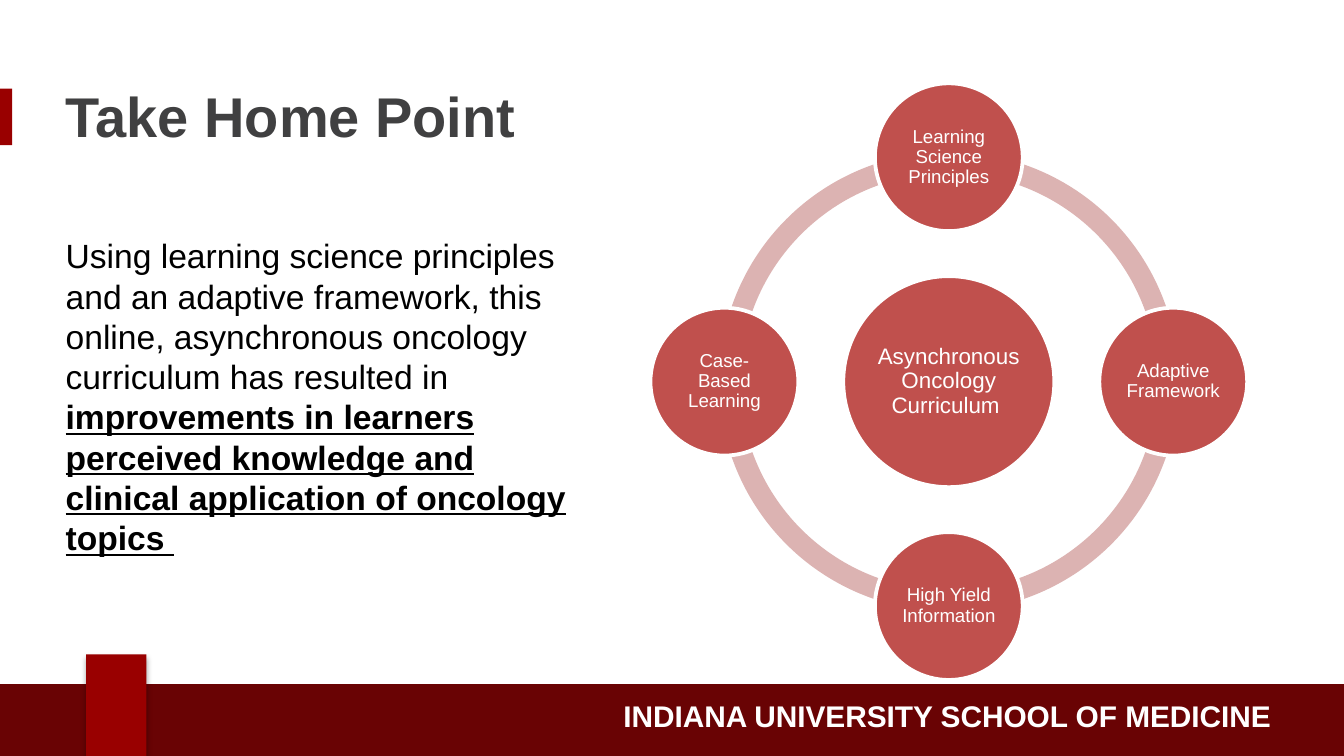
from lxml import etree
from pptx import Presentation
from pptx.dml.color import RGBColor
from pptx.enum.shapes import MSO_SHAPE
from pptx.enum.text import MSO_ANCHOR, PP_ALIGN
from pptx.oxml.ns import qn
from pptx.util import Inches, Pt

RECTANGLE, CIRCLE, ARC = MSO_SHAPE.RECTANGLE, MSO_SHAPE.OVAL, MSO_SHAPE.BLOCK_ARC
LEFT, CENTER, RIGHT = PP_ALIGN.LEFT, PP_ALIGN.CENTER, PP_ALIGN.RIGHT
TOP, MIDDLE = MSO_ANCHOR.TOP, MSO_ANCHOR.MIDDLE

CRIMSON = RGBColor(0x99, 0x00, 0x00)
MAROON = RGBColor(0x69, 0x03, 0x04)
CHARCOAL = RGBColor(0x40, 0x40, 0x41)
ROSE = RGBColor(0xDC, 0xB3, 0xB2)
BRICK = RGBColor(0xC0, 0x50, 0x4D)
WHITE = RGBColor(0xFF, 0xFF, 0xFF)
BLACK = RGBColor(0x00, 0x00, 0x00)

HUB_X, HUB_Y, ORBIT = 7.06, 2.84, 1.67
HUB_SIZE, TOPIC_SIZE, RING_SIZE = 1.57, 1.1, 3.42
TOPICS = [
    ("Learning Science Principles", 0, -1),
    ("Adaptive Framework", 1, 0),
    ("High Yield Information", 0, 1),
    ("Case-Based Learning", -1, 0),
]
QUARTERS = [(108, 162), (54, 108), (0, 54), (162, 0)]


def write(frame, *parts, size, color=BLACK, bold=False, align=LEFT,
          anchor=TOP, spacing=1.0, inset=None):
    frame.word_wrap = True
    frame.vertical_anchor = anchor
    if inset is not None:
        frame.margin_left = frame.margin_right = Inches(inset)
        frame.margin_top = frame.margin_bottom = Inches(inset)
    paragraph = frame.paragraphs[0]
    paragraph.alignment = align
    paragraph.line_spacing = spacing
    for text, emphasized in parts:
        run = paragraph.add_run()
        run.text = text
        run.font.name = "Arial"
        run.font.size = Pt(size)
        run.font.color.rgb = color
        run.font.bold = bold or emphasized
        run.font.underline = emphasized


class SlideBuilder:
    def __init__(self, slide):
        self.shapes = slide.shapes

    def shape(self, kind, left, top, width, height, fill):
        shape = self.shapes.add_shape(
            kind, Inches(left), Inches(top), Inches(width), Inches(height))
        shape.shadow.inherit = False
        shape.fill.solid()
        shape.fill.fore_color.rgb = fill
        shape.line.fill.background()
        return shape

    def drop_shadow(self, shape, blur, distance, opacity):
        effects = shape._element.spPr.find(qn("a:effectLst"))
        shadow = etree.SubElement(
            effects, qn("a:outerShdw"), blurRad=str(Pt(blur)),
            dist=str(Pt(distance)), dir="5400000", rotWithShape="0")
        color = etree.SubElement(shadow, qn("a:srgbClr"), val="000000")
        etree.SubElement(color, qn("a:alpha"), val=str(opacity * 1000))

    def text(self, left, top, width, height, *parts, **style):
        box = self.shapes.add_textbox(
            Inches(left), Inches(top), Inches(width), Inches(height))
        write(box.text_frame, *parts, **style)

    def arc(self, start, end):
        arc = self.shape(ARC, HUB_X - RING_SIZE / 2, HUB_Y - RING_SIZE / 2,
                         RING_SIZE, RING_SIZE, ROSE)
        for index, value in enumerate((start, end, 0.046)):
            arc.adjustments[index] = value

    def circle(self, label, x, y, diameter, size, inset):
        circle = self.shape(CIRCLE, x - diameter / 2, y - diameter / 2,
                            diameter, diameter, BRICK)
        circle.line.color.rgb = WHITE
        circle.line.width = Pt(2)
        write(circle.text_frame, (label, False), size=size, color=WHITE,
              align=CENTER, anchor=MIDDLE, spacing=0.9, inset=inset)


def main():
    presentation = Presentation()
    presentation.slide_width = Inches(10)
    presentation.slide_height = Inches(5.625)
    builder = SlideBuilder(
        presentation.slides.add_slide(presentation.slide_layouts[6]))

    builder.shape(RECTANGLE, 0, 0.66, 0.09, 0.42, CRIMSON)
    builder.shape(RECTANGLE, -0.03, 5.09, 10.09, 0.55, MAROON)
    builder.text(2.82, 5.14, 6.74, 0.37,
                 ("INDIANA UNIVERSITY SCHOOL OF MEDICINE", False),
                 size=16, color=WHITE, bold=True, align=RIGHT, anchor=MIDDLE)
    footer_tab = builder.shape(RECTANGLE, 0.64, 4.87, 0.45, 0.76, CRIMSON)
    builder.drop_shadow(footer_tab, blur=3.1, distance=1.8, opacity=35)

    builder.text(0.39, 0.56, 8.75, 0.76, ("Take Home Point", False),
                 size=30, color=CHARCOAL, bold=True)

    for start, end in QUARTERS:
        builder.arc(start, end)
    builder.circle("Asynchronous Oncology Curriculum ", HUB_X, HUB_Y,
                   HUB_SIZE, size=12, inset=0.02)
    for topic, across, down in TOPICS:
        builder.circle(topic, HUB_X + across * ORBIT, HUB_Y + down * ORBIT,
                       TOPIC_SIZE, size=10, inset=0.01)

    builder.text(
        0.39, 1.7, 3.95, 2.52,
        ("Using learning science principles and an adaptive framework, this "
         "online, asynchronous oncology curriculum has resulted in ", False),
        ("improvements in learners perceived knowledge and clinical "
         "application of oncology topics ", True),
        size=18)

    presentation.save("out.pptx")


if __name__ == "__main__":
    main()
